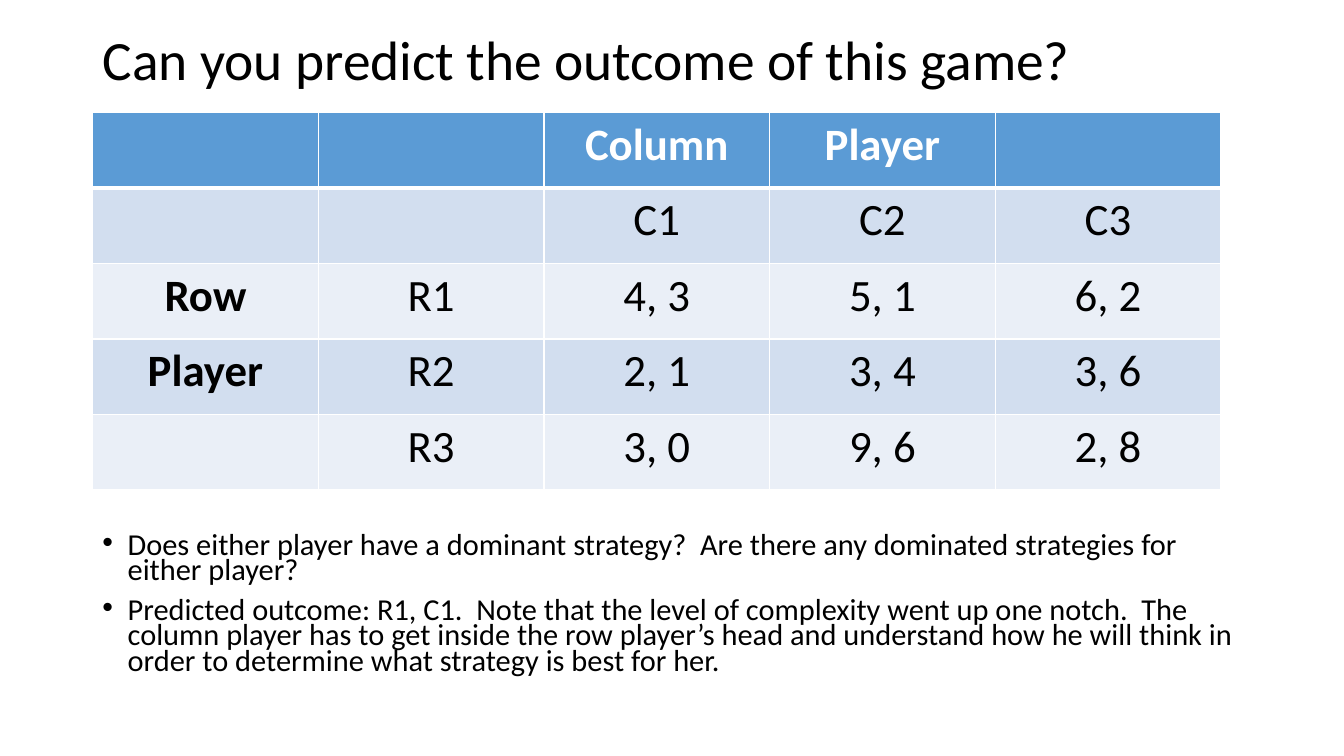
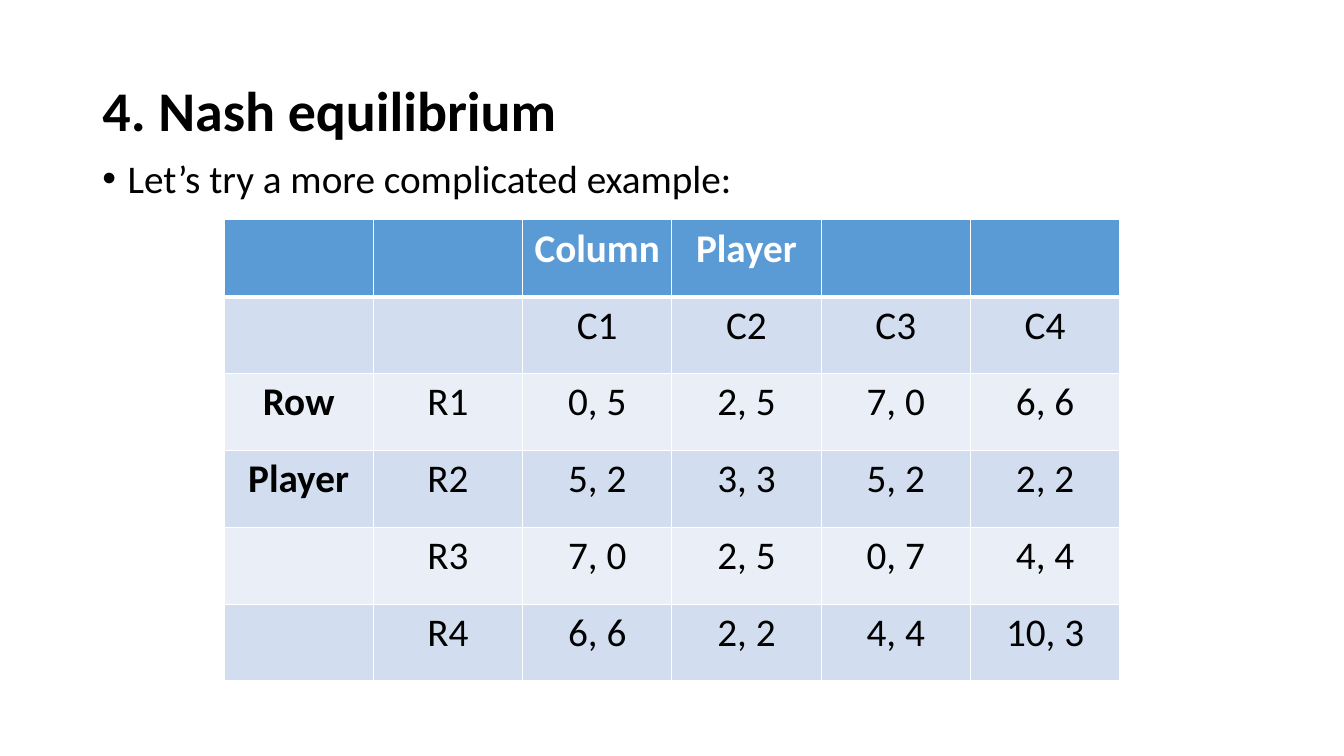
from lxml.etree import SubElement
from pptx import Presentation
from pptx.dml.color import RGBColor
from pptx.enum.text import MSO_AUTO_SIZE as AutoSize
from pptx.enum.text import MSO_VERTICAL_ANCHOR as Anchor
from pptx.enum.text import PP_ALIGN as Align
from pptx.oxml.ns import qn
from pptx.util import Pt

# Shared look
FONT = "Calibri"
BLACK, WHITE = "000000", "FFFFFF"
HEADER_FILL = "5B9BD5"
BAND_FILLS = ("D2DEEF", "EAEFF7")
THIN, THICK = 1, 3
BULLET_INDENT = Pt(18)
TEXT_LEFT, TEXT_WIDTH = 66, 828


def colour(hex_value):
    return RGBColor.from_string(hex_value)


def set_attributes(target, values):
    for name, value in values.items():
        setattr(target, name, value)


def place(shape, box):
    names = ("left", "top", "width", "height")
    set_attributes(shape, dict(zip(names, map(Pt, box))))


def write(para, text, size, ink=BLACK, bold=False, **layout):
    set_attributes(para, layout)
    span = para.add_run()
    span.text = text
    set_attributes(span.font, {"name": FONT, "size": Pt(size), "bold": bold})
    span.font.color.rgb = colour(ink)


def prepare_frame(shape, box, anchor):
    place(shape, box)
    frame = shape.text_frame
    set_attributes(frame, {"word_wrap": True, "auto_size": AutoSize.NONE,
                           "vertical_anchor": anchor})
    return frame


# Title and bullet list
def fill_title(page, box, text, size, bold=False):
    frame = prepare_frame(page.shapes.title, box, Anchor.MIDDLE)
    write(frame.paragraphs[0], text, size, bold=bold,
          alignment=Align.LEFT, line_spacing=0.9)


def fill_bullets(page, box, items, size, line_spacing):
    frame = prepare_frame(page.placeholders[1], box, Anchor.TOP)
    for index, item in enumerate(items):
        para = frame.add_paragraph() if index else frame.paragraphs[0]
        write(para, item, size, alignment=Align.LEFT,
              line_spacing=line_spacing, space_before=Pt(10))
        properties = para._p.get_or_add_pPr()
        properties.set("marL", str(BULLET_INDENT))
        properties.set("indent", str(-BULLET_INDENT))
        SubElement(properties, qn("a:buFont"), typeface="Arial")
        SubElement(properties, qn("a:buChar"), char="•")


# Payoff table
def draw_borders(cell, top, bottom):
    properties = cell._tc.get_or_add_tcPr()
    for side, width in (("L", THIN), ("R", THIN), ("T", top), ("B", bottom)):
        line = SubElement(properties, qn(f"a:ln{side}"), w=str(Pt(width)))
        fill = SubElement(line, qn("a:solidFill"))
        SubElement(fill, qn("a:srgbClr"), val=WHITE)


def payoff_rows(payoffs):
    """Add the player and strategy labels around the payoffs."""
    count = len(payoffs)
    header = ["", "", "Column", "Player"] + [""] * (count - 2)
    strategies = ["", ""] + [f"C{number + 1}" for number in range(count)]
    sides = ["Row", "Player"] + [""] * (count - 2)
    body = [[side, f"R{number}", *row]
            for number, (side, row) in enumerate(zip(sides, payoffs), 1)]
    return [header, strategies, *body]


def add_payoff_table(page, box, payoffs, size):
    rows = payoff_rows(payoffs)
    row_count, column_count = len(rows), len(rows[0])
    table = page.shapes.add_table(row_count, column_count,
                                  *map(Pt, box)).table
    for column in table.columns:
        column.width = Pt(box[2] / column_count)
    for row in table.rows:
        row.height = Pt(box[3] / row_count)
    for row_index, texts in enumerate(rows):
        is_header = row_index == 0
        fill = HEADER_FILL if is_header else BAND_FILLS[(row_index - 1) % 2]
        for column_index, text in enumerate(texts):
            cell = table.cell(row_index, column_index)
            draw_borders(cell, top=THICK if row_index == 1 else THIN,
                         bottom=THICK if is_header else THIN)
            cell.fill.solid()
            cell.fill.fore_color.rgb = colour(fill)
            if text:
                write(cell.text_frame.paragraphs[0], text, size,
                      ink=WHITE if is_header else BLACK,
                      bold=is_header or column_index == 0,
                      alignment=Align.CENTER)


# Slides
def add_page(deck):
    return deck.slides.add_slide(deck.slide_layouts[1])


def add_prediction_slide(deck):
    page = add_page(deck)
    fill_title(page, (TEXT_LEFT, 28.8, TEXT_WIDTH, 32.4),
               "Can you predict the outcome of this game?", 39.6)
    fill_bullets(page, (TEXT_LEFT, 378.5, TEXT_WIDTH, 108), [
        "Does either player have a dominant strategy?  Are there any "
        "dominated strategies for either player?",
        "Predicted outcome: R1, C1.  Note that the level of complexity went "
        "up one notch.  The column player has to get inside the row player’s "
        "head and understand how he will think in order to determine what "
        "strategy is best for her.",
    ], 21.7, line_spacing=0.7)
    add_payoff_table(page, (66.2, 80.6, 806, 269.3), [
        ["4, 3", "5, 1", "6, 2"],
        ["2, 1", "3, 4", "3, 6"],
        ["3, 0", "9, 6", "2, 8"],
    ], 32)


def add_equilibrium_slide(deck):
    page = add_page(deck)
    fill_title(page, (TEXT_LEFT, 28.8, TEXT_WIDTH, 104.4),
               "4. Nash equilibrium", 40, bold=True)
    fill_bullets(page, (TEXT_LEFT, 110.2, TEXT_WIDTH, 376.6),
                 ["Let’s try a more complicated example:"], 28,
                 line_spacing=0.9)
    add_payoff_table(page, (160, 157, 640, 329.5), [
        ["0, 5", "2, 5", "7, 0", "6, 6"],
        ["5, 2", "3, 3", "5, 2", "2, 2"],
        ["7, 0", "2, 5", "0, 7", "4, 4"],
        ["6, 6", "2, 2", "4, 4", "10, 3"],
    ], 28)


def main():
    deck = Presentation()
    set_attributes(deck, {"slide_width": Pt(960), "slide_height": Pt(540)})
    add_prediction_slide(deck)
    add_equilibrium_slide(deck)
    deck.save("out.pptx")


if __name__ == "__main__":
    main()
